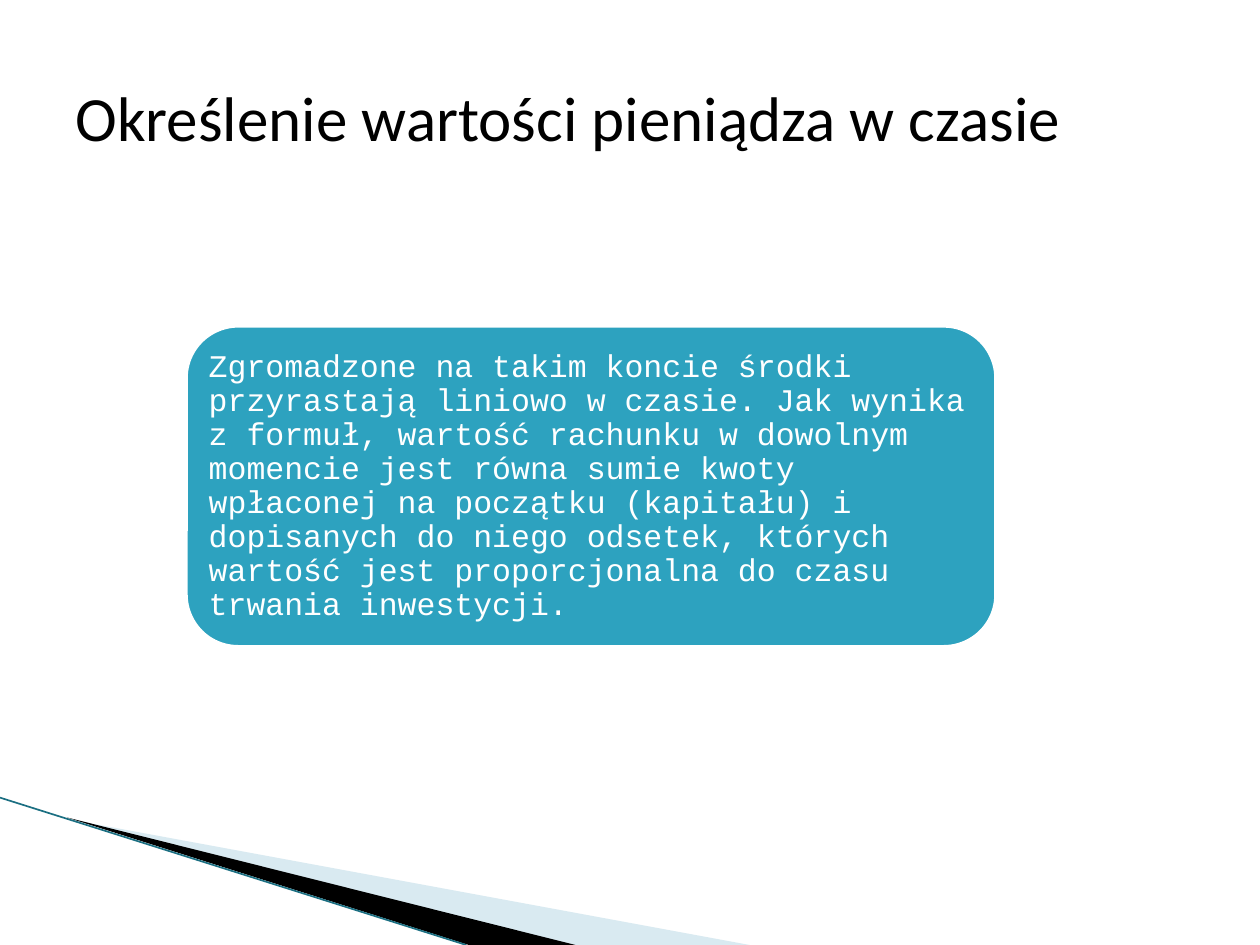
from lxml.etree import SubElement as Sub
from pptx import Presentation
from pptx.dml.color import RGBColor as RGB
from pptx.enum.shapes import MSO_CONNECTOR as LINK, MSO_SHAPE as SHAPE
from pptx.enum.text import MSO_ANCHOR as ANCHOR, PP_ALIGN as ALIGN
from pptx.oxml.ns import qn
from pptx.util import Cm, Pt

COLORS = {"pale": "A0CBDC", "black": "000000", "edge": "1B6F82",
          "card": "2DA2BF", "white": "FFFFFF"}
TITLE = "Określenie wartości pieniądza w czasie"
BODY = ("Zgromadzone na takim koncie środki przyrastają liniowo w czasie. "
        "Jak wynika z formuł, wartość rachunku w dowolnym momencie jest równa "
        "sumie kwoty wpłaconej na początku (kapitału) i dopisanych do niego "
        "odsetek, których wartość jest proporcjonalna do czasu trwania "
        "inwestycji.")


def color(name):
    return RGB.from_string(COLORS[name])


def write(shape, text, font, size, tone):
    frame = shape.text_frame
    frame.word_wrap = True
    frame.vertical_anchor = ANCHOR.MIDDLE
    par = frame.paragraphs[0]
    par.text = text
    par.alignment = ALIGN.LEFT
    par.font.name = font
    par.font.size = Pt(size)
    par.font.color.rgb = color(tone)
    return frame


deck = Presentation()
deck.slide_width, deck.slide_height = Cm(25.4), Cm(19.05)
slide = deck.slides.add_slide(deck.slide_layouts[5])
shapes = slide.shapes

# Corner wedges
wedges = [
    ("pale", 40, [(1.4, 16.52), (15.11, 19.05), (11.58, 19.05)]),
    ("black", 100, [(1.35, 16.48), (11.6, 19.05), (9.45, 19.05)]),
]
for tone, alpha, points in wedges:
    start, *rest = [(Cm(x), Cm(y)) for x, y in points]
    path = shapes.build_freeform(*start)
    path.add_line_segments(rest)
    wedge = path.convert_to_shape()
    wedge.shadow.inherit = False
    wedge.fill.solid()
    wedge.fill.fore_color.rgb = color(tone)
    wedge.line.fill.background()
    if alpha < 100:
        fill = wedge.fill._xPr.find(qn("a:solidFill"))
        Sub(fill[0], qn("a:alpha"), val=str(alpha * 1000))

edge = shapes.add_connector(LINK.STRAIGHT, Cm(0), Cm(16.08), Cm(9.4), Cm(19.05))
edge.line.color.rgb = color("edge")
edge.line.width = Pt(0.95)
Sub(edge._element.spPr, qn("a:effectLst"))

# Card
card = shapes.add_shape(SHAPE.ROUNDED_RECTANGLE,
                        Cm(3.71), Cm(6.53), Cm(16.41), Cm(6.55))
card.shadow.inherit = False
card.fill.solid()
card.fill.fore_color.rgb = color("card")
card.line.color.rgb = color("white")
card.line.width = Pt(4.33)
frame = write(card, BODY, "Courier New", 18, "white")
frame.margin_left = frame.margin_right = Cm(0.18)
frame.margin_top = frame.margin_bottom = Cm(0.18)
frame.paragraphs[0].line_spacing = 0.9

# Title
title = shapes.title
title.left, title.top, title.width, title.height = (
    Cm(1.27), Cm(0.76), Cm(22.86), Cm(3.18))
write(title, TITLE, "Calibri", 36, "black")

deck.save("out.pptx")
